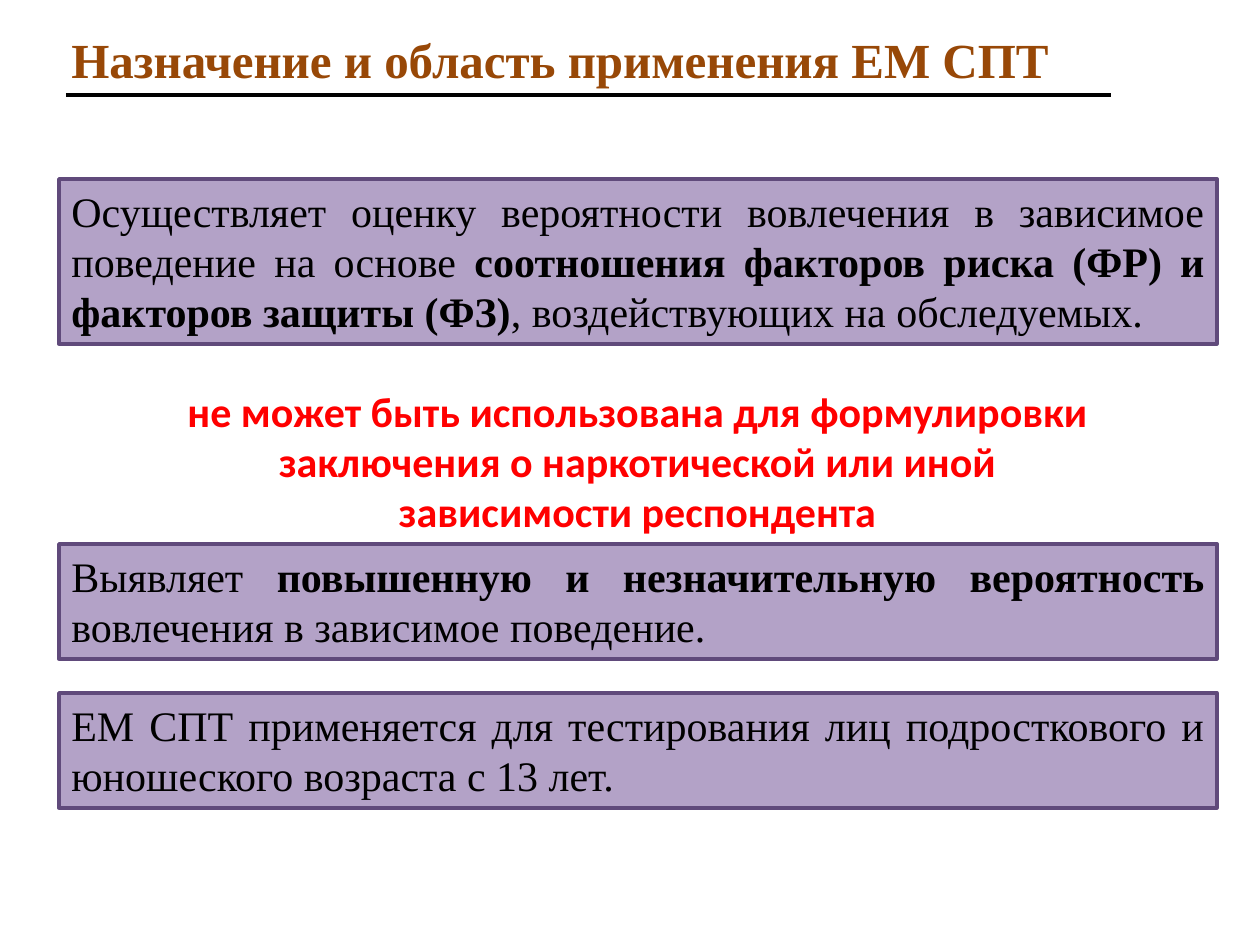
"""Builds the slide on the purpose and scope of the EM SPT test."""
from dataclasses import dataclass

from lxml.etree import SubElement
from pptx import Presentation
from pptx.dml.color import RGBColor
from pptx.enum.shapes import MSO_CONNECTOR, MSO_SHAPE
from pptx.enum.text import MSO_ANCHOR, MSO_AUTO_SIZE, PP_ALIGN
from pptx.oxml.ns import qn
from pptx.util import Pt

TITLE = "Назначение и область применения ЕМ СПТ"
WARNING = ("не может быть использована для формулировки заключения "
           "о наркотической или иной зависимости респондента")
PANELS = [
    (179, 165, [
        ("Осуществляет оценку вероятности вовлечения в зависимое поведение на основе ", False),
        ("соотношения факторов риска (ФР) и факторов защиты (ФЗ)", True),
        (", воздействующих на обследуемых.", False)]),
    (544, 115, [
        ("Выявляет ", False),
        ("повышенную и незначительную вероятность ", True),
        ("вовлечения в зависимое поведение.", False)]),
    (693, 115, [
        ("ЕМ СПТ применяется для тестирования лиц подросткового "
         "и юношеского возраста с 13 лет.", False)]),
]
LEFT, WIDE = 59, 1158


@dataclass(frozen=True)
class Theme:
    title: str = "984807"
    ink: str = "000000"
    alert: str = "FF0000"
    fill: str = "B3A2C7"
    edge: str = "604A7B"
    serif: str = "Times New Roman"
    sans: str = "Calibri"
    head: int = 28
    body: int = 24
    line: int = 2


THEME = Theme()


def px(count):
    return round(count * 914400 / 126)


def color(code):
    return RGBColor.from_string(code)


def write(shape, runs, font=THEME.serif, size=THEME.body, ink=THEME.ink,
          align=PP_ALIGN.LEFT, anchor=MSO_ANCHOR.TOP, wrap=True):
    frame = shape.text_frame
    frame.word_wrap = wrap
    frame.auto_size = MSO_AUTO_SIZE.SHAPE_TO_FIT_TEXT
    frame.vertical_anchor = anchor
    para = frame.paragraphs[0]
    para.alignment = align
    for text, bold in runs:
        run = para.add_run()
        run.text = text
        run.font.name = font
        run.font.size = Pt(size)
        run.font.bold = bold
        run.font.color.rgb = color(ink)


def label(slide, box, text, **style):
    shape = slide.shapes.add_textbox(*map(px, box))
    write(shape, [(text, True)], **style)


def panel(slide, top, high, runs):
    shape = slide.shapes.add_shape(
        MSO_SHAPE.RECTANGLE, *map(px, (LEFT, top, WIDE, high)))
    shape.shadow.inherit = False
    shape.fill.solid()
    shape.fill.fore_color.rgb = color(THEME.fill)
    shape.line.color.rgb = color(THEME.edge)
    shape.line.width = Pt(THEME.line)
    write(shape, runs, align=PP_ALIGN.JUSTIFY)


def rule(slide, start, end, level):
    line = slide.shapes.add_connector(
        MSO_CONNECTOR.STRAIGHT, *map(px, (start, level, end, level)))
    line.line.color.rgb = color(THEME.ink)
    line.line.width = Pt(THEME.line)
    SubElement(line._element.spPr, qn("a:effectLst"))


def main():
    deck = Presentation()
    deck.slide_width, deck.slide_height = px(1260), px(945)
    slide = deck.slides.add_slide(deck.slide_layouts[6])
    label(slide, (LEFT, 23, 1013, 72), TITLE,
          size=THEME.head, ink=THEME.title, wrap=False)
    rule(slide, 66, 1111, 95)
    for top, high, runs in PANELS:
        panel(slide, top, high, runs)
    label(slide, (174, 379, 927, 165), WARNING,
          font=THEME.sans, ink=THEME.alert, align=PP_ALIGN.CENTER)
    deck.save("out.pptx")


if __name__ == "__main__":
    main()
